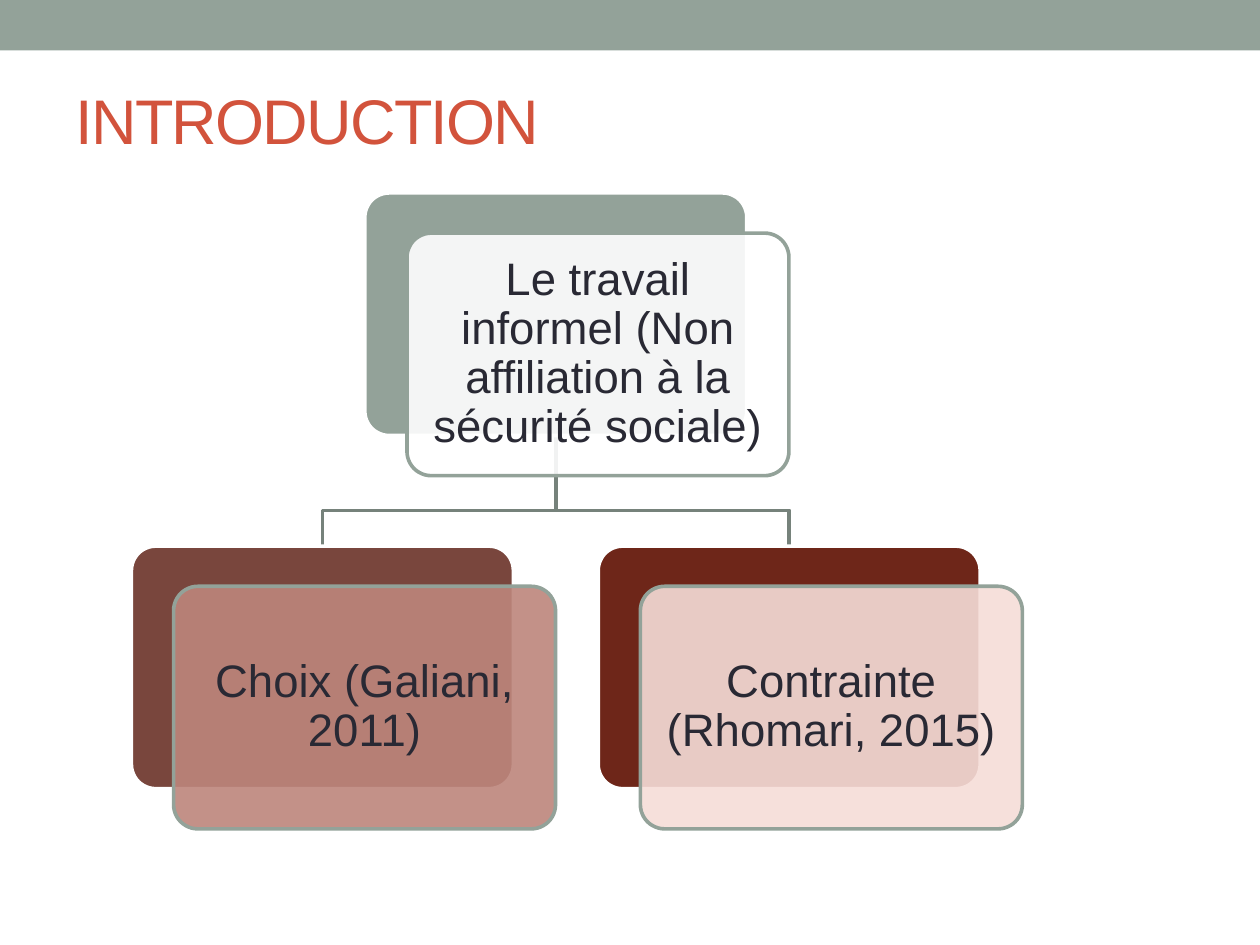
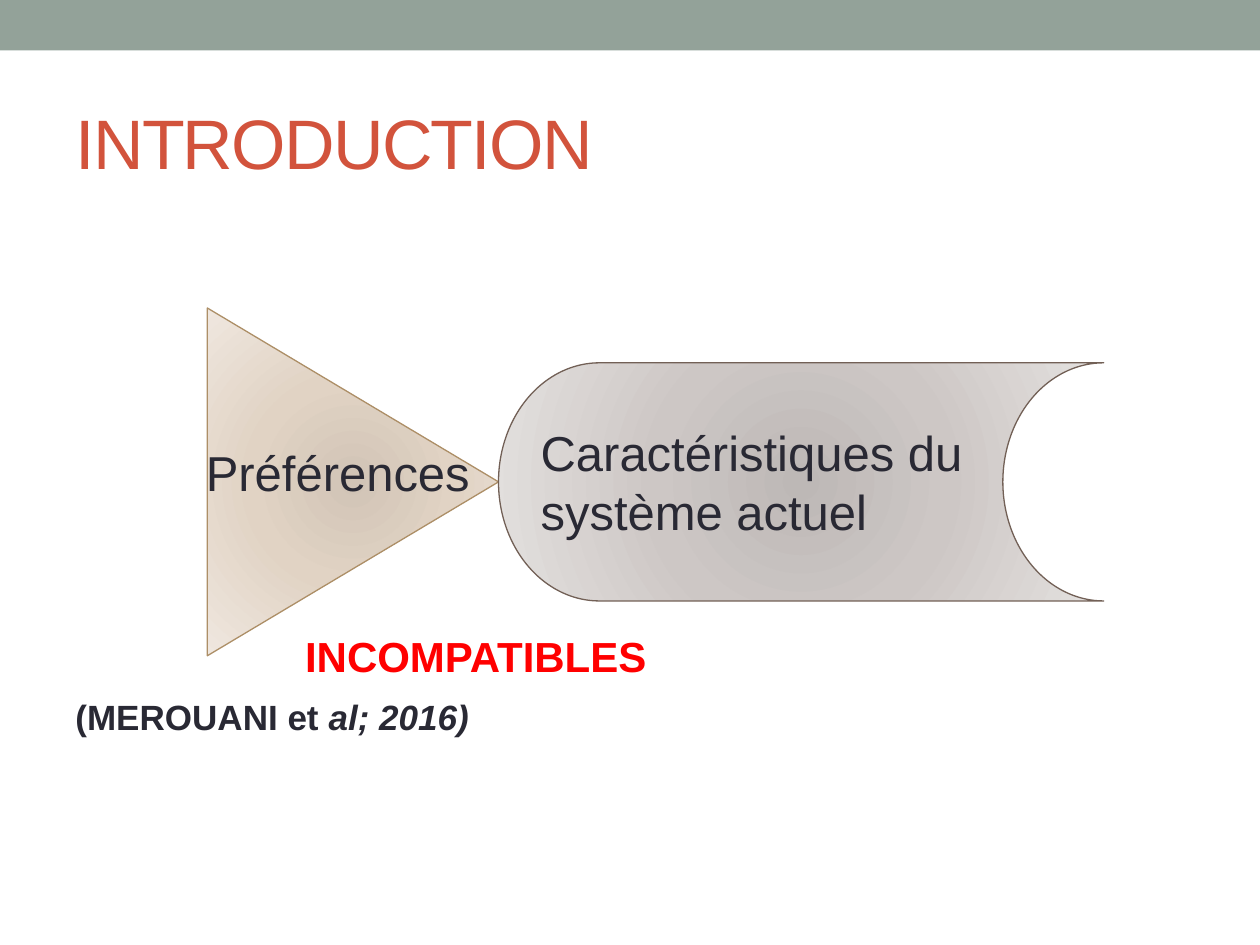
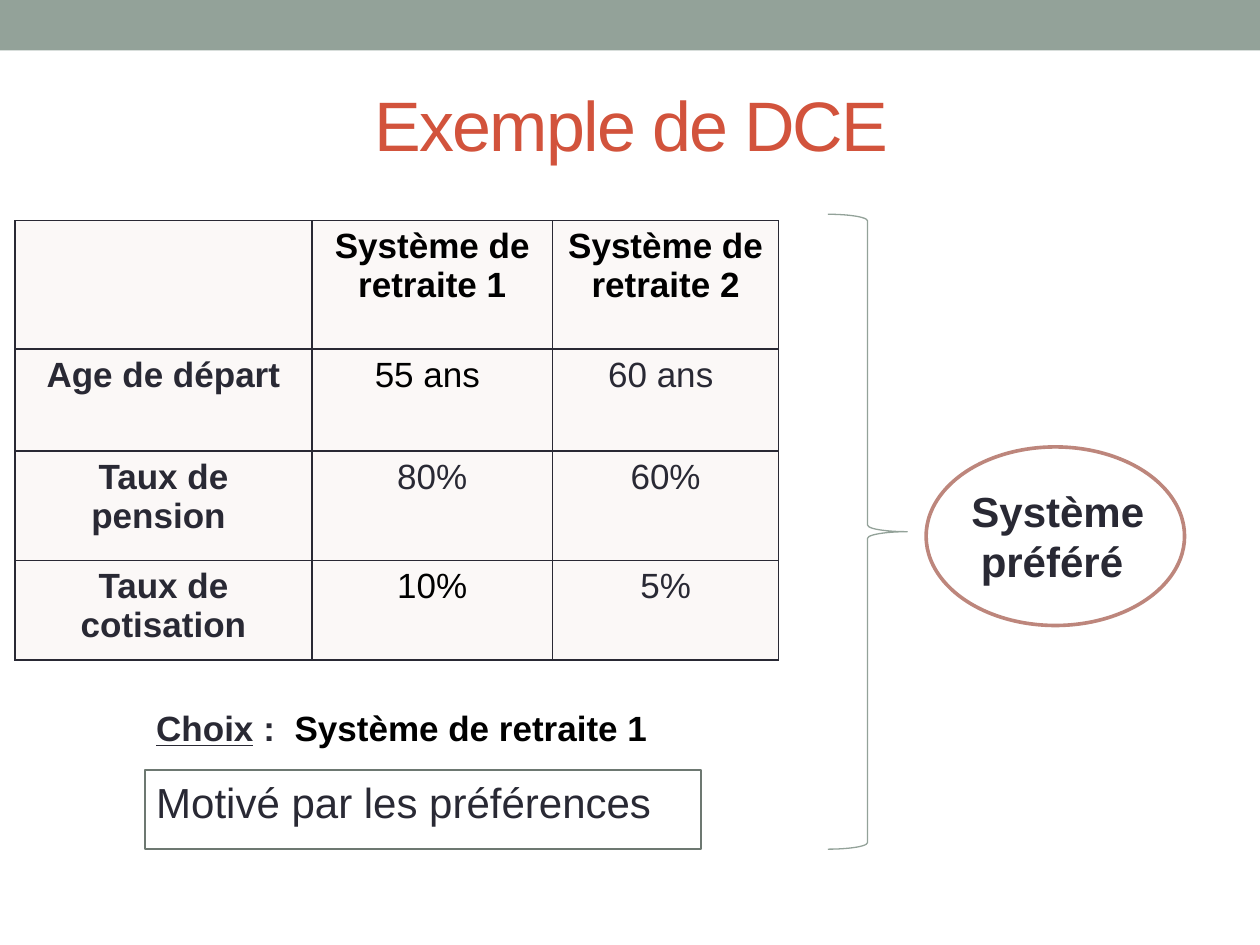
import pptx
import pptx.util
import pptx.dml.color
import pptx.enum.shapes
import pptx.enum.text
import pptx.oxml
import pptx.oxml.ns
import lxml.etree

Cm = pptx.util.Cm
Pt = pptx.util.Pt
qn = pptx.oxml.ns.qn
SHAPE = pptx.enum.shapes.MSO_SHAPE
ALIGN = pptx.enum.text.PP_ALIGN
ANCHOR = pptx.enum.text.MSO_ANCHOR

FONT = "Arial"
THICK = 2.08
THIN = 0.75
COLORS = {
    "sage": "93A299",
    "title": "D2533C",
    "ink": "292934",
    "black": "000000",
    "white": "FFFFFF",
    "red": "FF0000",
    "link": "76827B",
    "choice": "79463D",
    "choice_card": "BD867C",
    "constraint": "6E2619",
    "constraint_card": "F6DDD8",
    "cell": "FBF8F7",
    "frame": "6D7871",
    "sand_line": "AD8F67",
    "stone_line": "726056",
}
SAND = ("D1C4B6", "E1D3C4", "EFE7DF")
STONE = ("BDB8B6", "CDC7C5", "E4E1DF")


def rgb(name):
    return pptx.dml.color.RGBColor.from_string(COLORS[name])


def write(p, text, size=20, color="ink", bold=False, italic=False,
          underline=False, align=None, line_spacing=None, tracking=None):
    if align is not None:
        p.alignment = align
    if line_spacing is not None:
        p.line_spacing = line_spacing
    r = p.add_run()
    r.text = text
    r.font.name = FONT
    r.font.size = Pt(size)
    r.font.color.rgb = rgb(color)
    r.font.bold = bold
    r.font.italic = italic
    r.font.underline = underline
    if tracking is not None:
        r.font._element.set("spc", str(tracking * 100))


def add_label(s, x, y, w, h):
    tf = s.shapes.add_textbox(Cm(x), Cm(y), Cm(w), Cm(h)).text_frame
    tf.word_wrap = True
    return tf


def style_line(sp, line, width):
    if line is None:
        sp.line.fill.background()
    else:
        sp.line.color.rgb = rgb(line)
        sp.line.width = Pt(width)


def add_box(s, kind, x, y, w, h, fill=None, line=None, width=THICK, alpha=None):
    sp = s.shapes.add_shape(kind, Cm(x), Cm(y), Cm(w), Cm(h))
    sp.shadow.inherit = False
    style_line(sp, line, width)
    if fill is None:
        sp.fill.background()
    else:
        sp.fill.solid()
        sp.fill.fore_color.rgb = rgb(fill)
    if alpha is not None:
        clr = sp.element.spPr.find(qn("a:solidFill"))[0]
        lxml.etree.SubElement(clr, qn("a:alpha")).set("val", str(alpha * 1000))
    return sp


def fill_radial(sp, colors):
    stops = "".join(
        f'<a:gs pos="{pos}000"><a:srgbClr val="{c}"/></a:gs>'
        for pos, c in zip((0, 45, 100), colors))
    edges = " ".join(f'{side}="100000"' for side in "ltrb")
    grad = pptx.oxml.parse_xml(
        f'<a:gradFill {pptx.oxml.ns.nsdecls("a")} rotWithShape="1">'
        f'<a:gsLst>{stops}</a:gsLst>'
        f'<a:path path="circle"><a:fillToRect {edges}/></a:path></a:gradFill>')
    spPr = sp.element.spPr
    spPr.replace(spPr.find(qn("a:noFill")), grad)


def add_band(s, layout):
    band = add_box(s, SHAPE.RECTANGLE, 0, 0, 25.4, 1.02, fill="sage")
    layout.shapes.element.insert(2, band.element)


def add_title(s, text, x, y, w, h, size=40, align=ALIGN.LEFT):
    sp = s.shapes.title
    sp.left, sp.top, sp.width, sp.height = Cm(x), Cm(y), Cm(w), Cm(h)
    tf = sp.text_frame
    tf.auto_size = pptx.enum.text.MSO_AUTO_SIZE.NONE
    tf.vertical_anchor = ANCHOR.MIDDLE
    write(tf.paragraphs[0], text, size=size, color="title", align=align, tracking=-1)


def add_card(s, text, x, y, w, h, back, front):
    dx, dy = 0.85, 0.81
    fills = ((0, 0, back, "white", None), (dx, dy, front, "sage", 90))
    for left, top, fill, line, alpha in fills:
        sp = add_box(s, SHAPE.ROUNDED_RECTANGLE, x + left, y + top, w - dx, h - dy,
                     fill, line, alpha=alpha)
        sp.adjustments[0] = 0.1
    tf = sp.text_frame
    tf.word_wrap = True
    tf.vertical_anchor = ANCHOR.MIDDLE
    tf.margin_left = tf.margin_right = Cm(0.28)
    tf.margin_top = tf.margin_bottom = Cm(0.28)
    write(tf.paragraphs[0], text, size=26, align=ALIGN.CENTER, line_spacing=0.9)


def add_branch(s, x1, y1, x2, y2, bend):
    fb = s.shapes.build_freeform(Cm(x1), Cm(y1))
    fb.add_line_segments([(Cm(x1), Cm(bend)), (Cm(x2), Cm(bend)), (Cm(x2), Cm(y2))],
                         close=False)
    sp = fb.convert_to_shape()
    sp.shadow.inherit = False
    sp.fill.background()
    style_line(sp, "link", THICK)


def add_hierarchy(s, x, y, w, h):
    card_w, card_h = 8.55, 5.7
    back_w, back_h = 7.7, 4.89
    root_x = x + (w - card_w) / 2
    child_y = y + h - card_h
    children = (
        ("Choix (Galiani, 2011)", x, "choice", "choice_card"),
        ("Contrainte (Rhomari, 2015)", x + w - card_w, "constraint", "constraint_card"),
    )
    for _, left, _, _ in reversed(children):
        add_branch(s, root_x + back_w / 2, y + back_h, left + back_w / 2, child_y,
                   child_y - 0.72)
    add_card(s, "Le travail informel (Non affiliation à la sécurité sociale)",
             root_x, y, card_w, card_h, "sage", "white")
    for text, left, back, front in children:
        add_card(s, text, left, child_y, card_w, card_h, back, front)


def add_opposition(s, x, y, w, h):
    tip_w, store_h = 5.87, 4.8
    tip = add_box(s, SHAPE.FLOWCHART_EXTRACT, x + (tip_w - h) / 2, y + (h - tip_w) / 2,
                  h, tip_w, line="sand_line", width=THIN)
    tip.rotation = 90
    fill_radial(tip, SAND)
    tf = add_label(s, x - 0.28, y + 2.58, 5.85, 1.45)
    write(tf.paragraphs[0], "Préférences", size=28)

    store = add_box(s, SHAPE.FLOWCHART_STORED_DATA, x + tip_w, y + (h - store_h) / 2,
                    w - tip_w, store_h, line="stone_line", width=THIN)
    fill_radial(store, STONE)
    tf = add_label(s, x + tip_w + 0.6, y + 2.18, 10.39, 2.64)
    write(tf.paragraphs[0], "Caractéristiques du système actuel", size=28)


def add_verdict(s, x, y, w, h):
    tf = add_label(s, x + 4.63, y, 7.6, 1.27)
    write(tf.paragraphs[0], "INCOMPATIBLES", size=24, color="red", bold=True)
    tf = add_label(s, x, y + h - 1.07, w, 1.07)
    p = tf.paragraphs[0]
    write(p, "(MEROUANI et ", bold=True)
    write(p, "al; 2016)", bold=True, italic=True)


def border_cell(cell):
    tcPr = cell._tc.get_or_add_tcPr()
    for i, side in enumerate("LRTB"):
        tcPr.insert(i, pptx.oxml.parse_xml(
            f'<a:ln{side} {pptx.oxml.ns.nsdecls("a")} w="12700"><a:solidFill>'
            f'<a:srgbClr val="{COLORS["ink"]}"/></a:solidFill></a:ln{side}>'))


def add_systems_table(s, x, y, w, h):
    rows = (
        ("", "Système de retraite 1", "Système de retraite 2"),
        ("Age de départ", "55 ans ", "60 ans "),
        ("Taux de pension ", "80%", "60%"),
        ("Taux de cotisation", "10%", "5%"),
    )
    black = {(0, 1), (0, 2), (1, 1), (3, 1)}
    table = s.shapes.add_table(4, 3, Cm(x), Cm(y), Cm(w), Cm(h)).table
    table.first_row = table.horz_banding = False
    for col, width in zip(table.columns, (5.99, 4.85, 4.56)):
        col.width = Cm(width)
    for row, share in zip(table.rows, (0.292, 0.232, 0.249, 0.227)):
        row.height = Cm(h * share)
    for i, texts in enumerate(rows):
        for j, text in enumerate(texts):
            cell = table.cell(i, j)
            cell.fill.solid()
            cell.fill.fore_color.rgb = rgb("cell")
            border_cell(cell)
            if text:
                write(cell.text_frame.paragraphs[0], text, align=ALIGN.CENTER,
                      color="black" if (i, j) in black else "ink",
                      bold=i == 0 or j == 0)


def add_choice(s, x, y, w, h):
    p = add_label(s, x, y, w, 1.1).paragraphs[0]
    write(p, "Choix", bold=True, underline=True)
    write(p, " :  ", bold=True)
    write(p, "Système de retraite 1", color="black", bold=True)
    reason_h = 1.6
    add_box(s, SHAPE.RECTANGLE, x + 0.02, y + h - reason_h, w, reason_h,
            line="frame", width=1)
    tf = add_label(s, x, y + h - reason_h, w, 1.27)
    write(tf.paragraphs[0], "Motivé par les préférences", size=24)


def add_preferred(s, x, y, w, h):
    add_box(s, SHAPE.RIGHT_BRACE, x, y, 1.6, h, line="sage", width=THIN)
    oval_w, oval_h = 5.21, 3.6
    oval_x, oval_y = x + w - oval_w, y + 4.69
    tf = add_label(s, oval_x + 0.1, oval_y + 0.65, oval_w - 0.1, 2.31)
    write(tf.paragraphs[0], "Système", size=24, bold=True, align=ALIGN.CENTER)
    write(tf.add_paragraph(), "préféré ", size=24, bold=True, align=ALIGN.CENTER)
    add_box(s, SHAPE.OVAL, oval_x, oval_y, oval_w, oval_h, line="choice_card")


def main():
    prs = pptx.Presentation()
    prs.slide_width, prs.slide_height = Cm(25.4), Cm(19.05)
    layout = prs.slide_layouts[5]

    s = prs.slides.add_slide(layout)
    add_band(s, layout)
    add_title(s, "INTRODUCTION", 1.27, 1.47, 22.86, 1.85, size=36)
    add_hierarchy(s, 2.65, 3.89, 17.96, 12.82)

    s = prs.slides.add_slide(layout)
    add_title(s, "INTRODUCTION", 1.27, 1.48, 22.86, 2.75)
    add_opposition(s, 4.18, 6.21, 18.07, 7.01)
    add_verdict(s, 1.27, 12.58, 22.86, 2.39)

    s = prs.slides.add_slide(layout)
    add_title(s, "Exemple de DCE", 1.3, 1.12, 22.86, 2.74, align=ALIGN.CENTER)
    add_systems_table(s, 0.3, 4.45, 15.4, 8.86)
    add_choice(s, 2.9, 14.12, 11.21, 3)
    add_preferred(s, 16.69, 4.32, 7.19, 12.8)

    prs.save("out.pptx")


if __name__ == "__main__":
    main()
